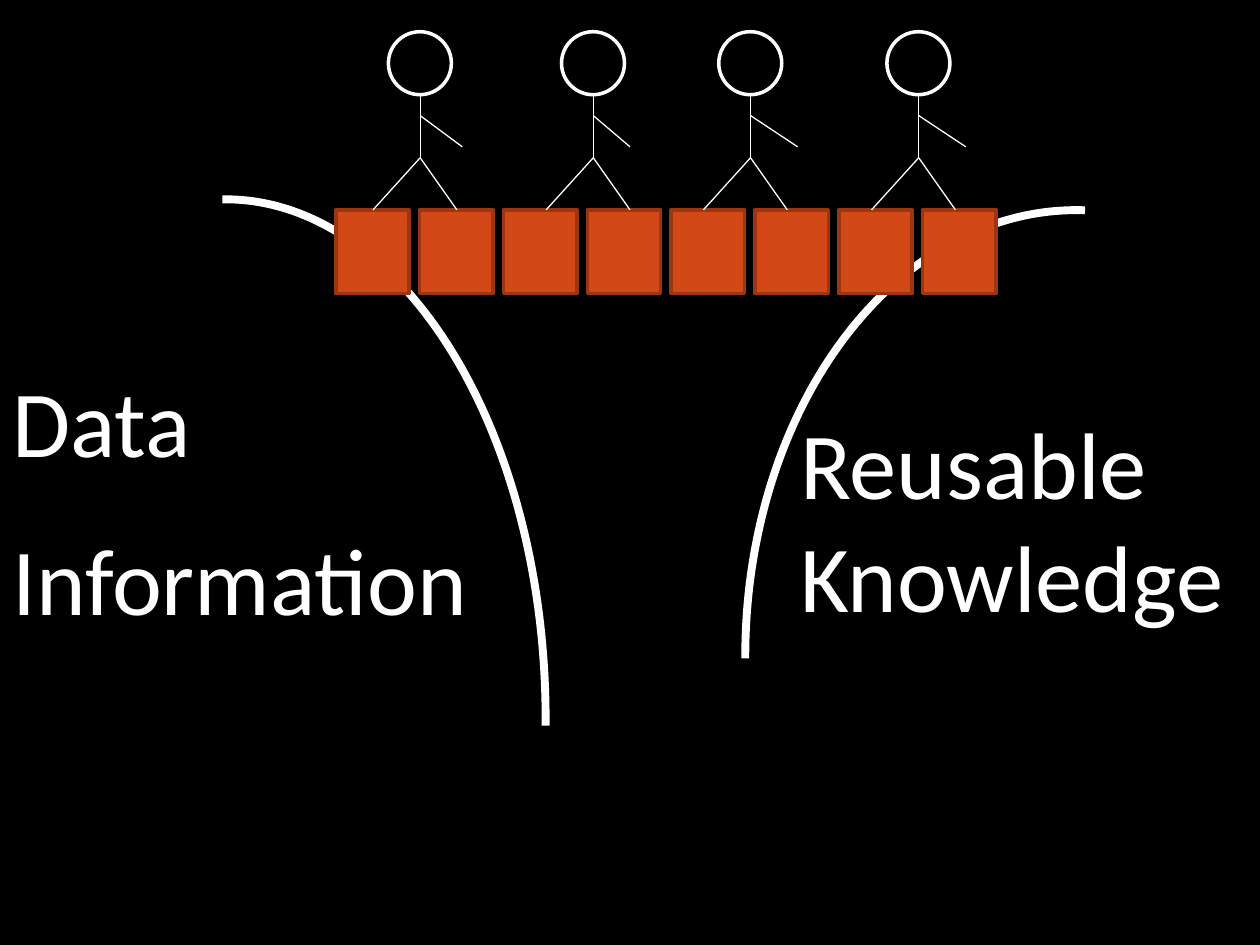
"""Build a slide of people crossing a brick bridge from data to knowledge."""
import pptx
import pptx.dml.color
import pptx.enum.shapes
import pptx.enum.text
import pptx.oxml
import pptx.util

Cm = pptx.util.Cm
Pt = pptx.util.Pt
SHAPES = pptx.enum.shapes.MSO_SHAPE

COLOURS = {"background": "000000", "chalk": "FFFFFF", "brick": "D34817", "mortar": "9C3511"}


class BridgeSlide:
    """Holds the style and the current slide, and draws each kind of element."""

    font = "Calibri"
    text_size = 54

    def __init__(self, page):
        """Keep the page and paint its background."""
        self.page = page
        self.paint(page.background.fill, "background")

    def paint(self, fill, colour):
        """Make a fill solid in a named colour."""
        fill.solid()
        fill.fore_color.rgb = pptx.dml.color.RGBColor.from_string(COLOURS[colour])

    def outline(self, line, colour, width):
        """Set the colour and width of a line."""
        self.paint(line.fill, colour)
        line.width = Pt(width)

    def shape(self, parent, kind, place, line, width, fill=None):
        """Add a preset shape, hollow unless a fill is named."""
        shape = parent.add_shape(kind, *map(Cm, place))
        shape.shadow.inherit = False
        if fill:
            self.paint(shape.fill, fill)
        else:
            shape.fill.background()
        self.outline(shape.line, line, width)
        return shape

    def cliff(self, place, rotation=0):
        """Add a quarter arc as the edge of the gap."""
        arc = self.shape(self.page.shapes, SHAPES.ARC, place, "chalk", 4.5)
        arc.adjustments[0] = 161.788
        arc.adjustments[1] = 0.684
        arc.rotation = rotation

    def brick(self, left):
        """Add one brick of the bridge."""
        place = (left, 4.23, 1.48, 1.69)
        self.shape(self.page.shapes, SHAPES.RECTANGLE, place, "mortar", 2, "brick")

    def limb(self, parent, start, end):
        """Add a thin straight line to a figure."""
        straight = pptx.enum.shapes.MSO_CONNECTOR.STRAIGHT
        limb = parent.add_connector(straight, *map(Cm, start + end))
        self.outline(limb.line, "chalk", 0.75)
        limb.line._get_or_add_ln().getparent().append(
            pptx.oxml.parse_xml(
                '<a:effectLst xmlns:a="http://schemas.openxmlformats.org/drawingml/2006/main"/>'
            )
        )

    def figure(self, middle, reach):
        """Add a grouped stick figure standing on the bridge."""
        parts = self.page.shapes.add_group_shape().shapes
        self.shape(parts, SHAPES.OVAL, (middle - 0.64, 0.64, 1.27, 1.27), "chalk", 2)
        hip = (middle, 3.18)
        self.limb(parts, (middle, 1.91), hip)
        for stride in (-0.95, 0.74):
            self.limb(parts, hip, (middle + stride, 4.23))
        self.limb(parts, (middle, 2.33), (middle + reach, 2.96))

    def label(self, words, place, wrap=True):
        """Add a large text box."""
        box = self.page.shapes.add_textbox(*map(Cm, place))
        frame = box.text_frame
        frame.word_wrap = wrap
        frame.auto_size = pptx.enum.text.MSO_AUTO_SIZE.SHAPE_TO_FIT_TEXT
        span = frame.paragraphs[0].add_run()
        span.text = words
        span.font.name = self.font
        span.font.size = Pt(self.text_size)
        self.paint(span.font.fill, "chalk")


def main():
    """Build and save the deck."""
    deck = pptx.Presentation()
    deck.slide_width, deck.slide_height = Cm(25.4), Cm(19.05)
    bridge = BridgeSlide(deck.slides.add_slide(deck.slide_layouts[6]))

    bridge.cliff((-1.9, 4.02, 12.9, 20.96))
    bridge.label("Data", (0, 7.2, 8.69, 2.56))
    bridge.label("Information", (0, 10.37, 9.78, 2.56), wrap=False)
    bridge.cliff((12.7, 6.56, 17.99, 13.34), rotation=270)
    for index in range(8):
        bridge.brick(6.77 + 1.69 * index)
    for middle, reach in ((8.47, 0.85), (11.96, 0.74), (15.13, 0.95), (18.52, 0.95)):
        bridge.figure(middle, reach)
    bridge.label("Reusable Knowledge", (15.88, 8.04, 9.53, 4.87))

    deck.save("out.pptx")


if __name__ == "__main__":
    main()
